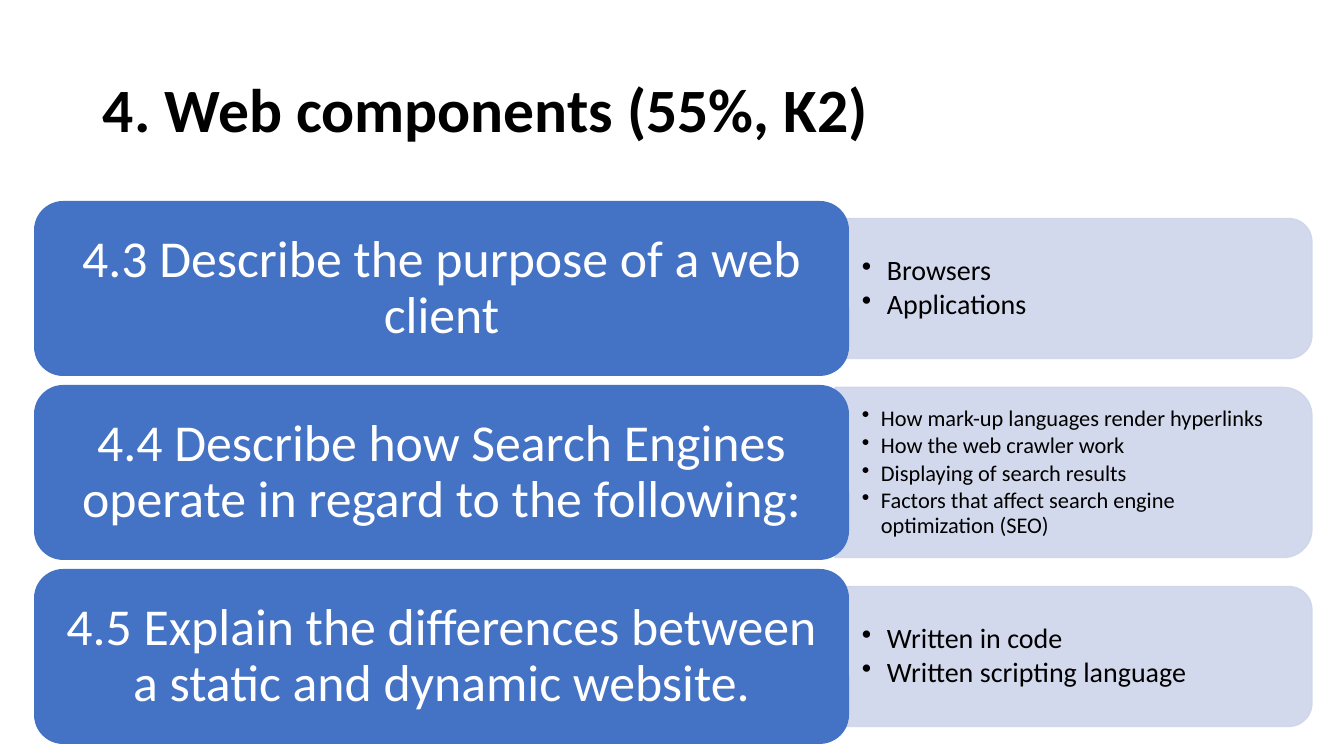
from math import cos, pi, sin

from lxml.etree import SubElement
from pptx import Presentation
from pptx.dml.color import RGBColor
from pptx.enum.shapes import MSO_SHAPE as Shape
from pptx.enum.text import MSO_ANCHOR as Anchor, PP_ALIGN as Align
from pptx.oxml.ns import qn
from pptx.util import Pt

PX = 914400 / 100.8
BLACK = RGBColor(0x00, 0x00, 0x00)
WHITE = RGBColor(0xFF, 0xFF, 0xFF)
BLUE = RGBColor(0x44, 0x72, 0xC4)
PALE_BLUE = RGBColor(0xCF, 0xD5, 0xEA)

LABEL_LEFT, LABEL_TOP, LABEL_WIDTH, LABEL_HEIGHT = 34, 201, 815, 175
ROW_PITCH = 184
PANEL_LEFT, PANEL_RIGHT = 835, 1312
ARC_STEPS = 12

# label, panel height, bullet size, bullet indent, bullets
ROWS = [
    ("4.3 Describe the purpose of a web client", 140, 20, 25,
     ["Browsers", "Applications"]),
    ("4.4 Describe how Search Engines operate in regard to the following:", 170, 16, 19,
     ["How mark-up languages render hyperlinks", "How the web crawler work",
      "Displaying of search results",
      "Factors that affect search engine optimization (SEO)"]),
    ("4.5 Explain the differences between a static and dynamic website.", 140, 20, 25,
     ["Written in code", "Written scripting language"]),
]


def emu(*lengths):
    return [round(length * PX) for length in lengths]


def set_text(box, lines, size, color, align, insets, bold=False):
    """Fill the box with one paragraph a line; insets are left, top, right, bottom."""
    frame = box.text_frame
    frame.word_wrap = True
    frame.vertical_anchor = Anchor.MIDDLE
    (frame.margin_left, frame.margin_top,
     frame.margin_right, frame.margin_bottom) = emu(*insets)
    frame.text = "\n".join(lines)
    for para in frame.paragraphs:
        para.alignment = align
        para.line_spacing = 0.9
        font = para.runs[0].font
        font.name, font.size, font.bold = "Calibri", Pt(size), bold
        font.color.rgb = color


deck = Presentation()
deck.slide_width, deck.slide_height = emu(1344, 756)
page = deck.slides.add_slide(deck.slide_layouts[6])

title = page.shapes.add_textbox(*emu(93, 40, 1159, 146))
set_text(title, ["4. Web components (55%, K2)"], 44, BLACK, Align.LEFT,
         (10, 5, 10, 5), bold=True)

for row, (heading, height, size, indent, bullets) in enumerate(ROWS):
    label_top = LABEL_TOP + row * ROW_PITCH
    top = label_top + (LABEL_HEIGHT - height) / 2
    bottom = top + height

    # Panel: square on the left, rounded on the right
    radius = height / 6
    outline = [(PANEL_LEFT, top)]
    for center_y, start in ((top + radius, -pi / 2), (bottom - radius, 0)):
        for step in range(ARC_STEPS + 1):
            angle = start + step * pi / 2 / ARC_STEPS
            outline.append((PANEL_RIGHT - radius + radius * cos(angle),
                            center_y + radius * sin(angle)))
    outline.append((PANEL_LEFT, bottom))
    points = [emu(*point) for point in outline]
    builder = page.shapes.build_freeform(*points[0])
    builder.add_line_segments(points[1:], close=True)
    panel = builder.convert_to_shape()
    panel.shadow.inherit = False
    panel.fill.solid()
    panel.fill.fore_color.rgb = PALE_BLUE
    panel.line.color.rgb = PALE_BLUE
    panel.line.width = Pt(1)
    for color in panel._element.spPr.iter(qn("a:srgbClr")):
        SubElement(color, qn("a:alpha"), val="90000")

    set_text(panel, bullets, size, BLACK, Align.LEFT, (27, 21, 35, 21))
    for para in panel.text_frame.paragraphs:
        para.space_after = Pt(size * 0.15)
        props = para._p.get_or_add_pPr()
        hang = emu(indent)[0]
        props.set("marL", str(hang))
        props.set("indent", str(-hang))
        SubElement(props, qn("a:buChar"), char="•")

    label = page.shapes.add_shape(
        Shape.ROUNDED_RECTANGLE,
        *emu(LABEL_LEFT, label_top, LABEL_WIDTH, LABEL_HEIGHT))
    label.shadow.inherit = False
    label.fill.solid()
    label.fill.fore_color.rgb = BLUE
    label.line.fill.background()
    # A rounded rectangle already insets its text by about 9 px
    set_text(label, [heading], 37, WHITE, Align.CENTER, (16, 8, 16, 8))

deck.save("out.pptx")
